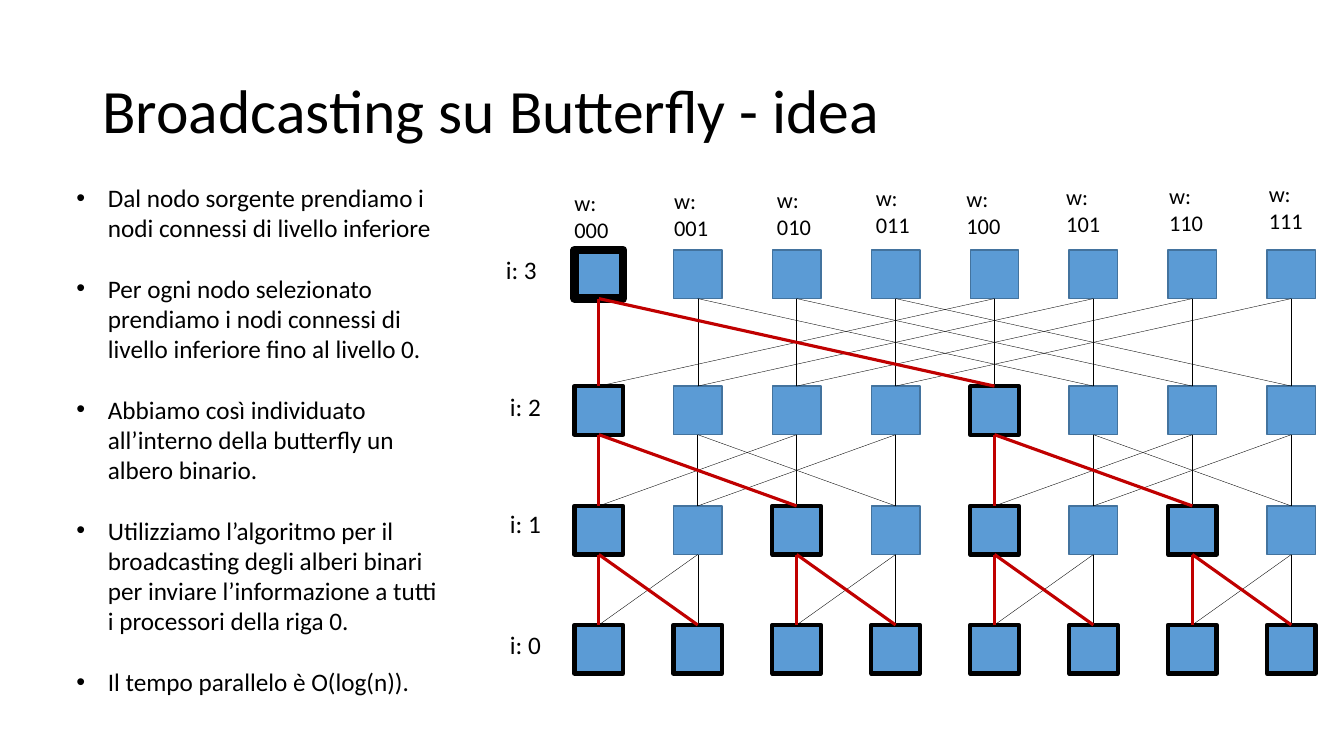
from lxml.etree import SubElement
from pptx import Presentation
from pptx.dml.color import RGBColor
from pptx.enum.shapes import MSO_CONNECTOR, MSO_SHAPE
from pptx.enum.text import MSO_ANCHOR, MSO_AUTO_SIZE, PP_ALIGN
from pptx.oxml.ns import qn
from pptx.util import Pt

FONT = "Calibri"
BLACK, RED, BLUE, DARK_BLUE = "000000", "C00000", "5B9BD5", "43739E"
NODE_SIZE = 34.7
COLUMN_STEP = 70.66
COLUMN_COUNT = 8
LEVEL_TOPS = {3: 0, 2: 97.2, 1: 182.8, 0: 267.8}
LEVEL_LABEL_OFFSETS = {3: (-56.2, -0.7), 2: (-53.3, 0), 1: (-53.3, -2.2), 0: (-53.3, -0.7)}
COLUMN_LABEL_OFFSETS = [(-7.2, -46.8), (-6.6, -48.2), (-3.8, -49), (-3.9, -50.4),
                        (-9.8, -49.7), (-9.2, -51.1), (-6.4, -51.8), (-5.8, -53.3)]
BOLDER_STRAIGHT_EDGES = {(3, 6), (2, 1), (2, 5)}
POINTS = [
    "Dal nodo sorgente prendiamo i nodi connessi di livello inferiore",
    "Per ogni nodo selezionato prendiamo i nodi connessi di livello inferiore fino al livello 0.",
    "Abbiamo così individuato all’interno della butterfly un albero binario.",
    "Utilizziamo l’algoritmo per il broadcasting degli alberi binari per inviare "
    "l’informazione a tutti i processori della riga 0.",
    "Il tempo parallelo è O(log(n)).",
]


def color(value):
    """Turn a hex string into a colour."""
    return RGBColor.from_string(value)


def format_text(frame, size):
    """Give every run in a text frame the slide font."""
    for para in frame.paragraphs:
        for span in para.runs:
            span.font.name = FONT
            span.font.size = Pt(size)
            span.font.color.rgb = color(BLACK)


def add_text(shapes, left, top, width, height, text, size):
    """Add a wrapping text box and return its frame."""
    box = shapes.add_textbox(Pt(left), Pt(top), Pt(width), Pt(height))
    frame = box.text_frame
    frame.word_wrap = True
    frame.text = text
    format_text(frame, size)
    return frame


def add_title(slide, left, top, width, height):
    """Place and format the title placeholder."""
    title = slide.shapes.title
    title.left, title.top, title.width, title.height = Pt(left), Pt(top), Pt(width), Pt(height)
    frame = title.text_frame
    frame.text = "Broadcasting su Butterfly - idea"
    frame.vertical_anchor = MSO_ANCHOR.MIDDLE
    frame.auto_size = MSO_AUTO_SIZE.NONE
    frame.paragraphs[0].alignment = PP_ALIGN.LEFT
    frame.paragraphs[0].line_spacing = 0.9
    format_text(frame, 44)


def add_bullets(slide, left, top, width, height):
    """Add the bulleted explanation."""
    frame = add_text(slide.shapes, left, top, width, height, "\n".join(POINTS), 18)
    for index, para in enumerate(frame.paragraphs):
        para.line_spacing = Pt(21.6)
        para.space_before = Pt(21.6 if index else 0)
        properties = para._p.get_or_add_pPr()
        properties.set("marL", str(Pt(22.5)))
        properties.set("indent", str(-Pt(22.5)))
        SubElement(properties, qn("a:buFont"), typeface="Arial")
        SubElement(properties, qn("a:buChar"), char="•")


def is_reached(level, column):
    """Tell whether the broadcast tree contains a node."""
    return column % 2 ** level == 0


def add_node(shapes, left, top, level, column):
    """Add one processor, outlined in black when reached."""
    node = shapes.add_shape(MSO_SHAPE.RECTANGLE, Pt(left), Pt(top), Pt(NODE_SIZE), Pt(NODE_SIZE))
    node.shadow.inherit = False
    node.fill.solid()
    node.fill.fore_color.rgb = color(BLUE)
    reached = is_reached(level, column)
    node.line.color.rgb = color(BLACK if reached else DARK_BLUE)
    node.line.width = Pt((6 if level == 3 else 3) if reached else 1)


def add_edge(shapes, start, end, line_color, width):
    """Add a straight line between two points."""
    edge = shapes.add_connector(MSO_CONNECTOR.STRAIGHT, *map(Pt, start + end))
    edge.line.color.rgb = color(line_color)
    edge.line.width = Pt(width)
    SubElement(edge._element.spPr, qn("a:effectLst"))


def add_level_edges(shapes, left, top, level, reached):
    """Join a level to the next one, for reached or for other nodes."""
    start_y = top + LEVEL_TOPS[level] + NODE_SIZE
    end_y = top + LEVEL_TOPS[level - 1]
    for column in range(COLUMN_COUNT):
        if is_reached(level, column) != reached:
            continue
        for target in (column, column ^ 2 ** (level - 1)):
            bolder = target == column and (level, column) in BOLDER_STRAIGHT_EDGES
            start, end = ((left + index * COLUMN_STEP + NODE_SIZE / 2, y)
                          for index, y in ((column, start_y), (target, end_y)))
            width = 2.25 if reached else 0.75 if bolder else 0.25
            add_edge(shapes, start, end, RED if reached else BLACK, width)


def add_butterfly(slide, left, top):
    """Draw the butterfly network with its broadcast tree."""
    shapes = slide.shapes.add_group_shape().shapes
    for level, offset in LEVEL_TOPS.items():
        for column in range(COLUMN_COUNT):
            add_node(shapes, left + column * COLUMN_STEP, top + offset, level, column)
    for reached in (False, True):
        for level in (3, 2, 1):
            add_level_edges(shapes, left, top, level, reached)
    for level, (shift_x, shift_y) in LEVEL_LABEL_OFFSETS.items():
        add_text(shapes, left + shift_x, top + LEVEL_TOPS[level] + shift_y,
                 51.1, 38.2, f"i: {level}", 18)
    for column, (shift_x, shift_y) in enumerate(COLUMN_LABEL_OFFSETS):
        add_text(shapes, left + column * COLUMN_STEP + shift_x, top + shift_y,
                 51.1, 38.2, f"w: {column:03b}", 16)


def main():
    """Build and save the deck."""
    deck = Presentation()
    deck.slide_width, deck.slide_height = Pt(960), Pt(540)
    slide = deck.slides.add_slide(deck.slide_layouts[5])
    add_title(slide, 66, 28.8, 828, 104.4)
    add_butterfly(slide, 410.4, 178.6)
    add_bullets(slide, 47.5, 126.7, 277.9, 378)
    deck.save("out.pptx")


if __name__ == "__main__":
    main()
